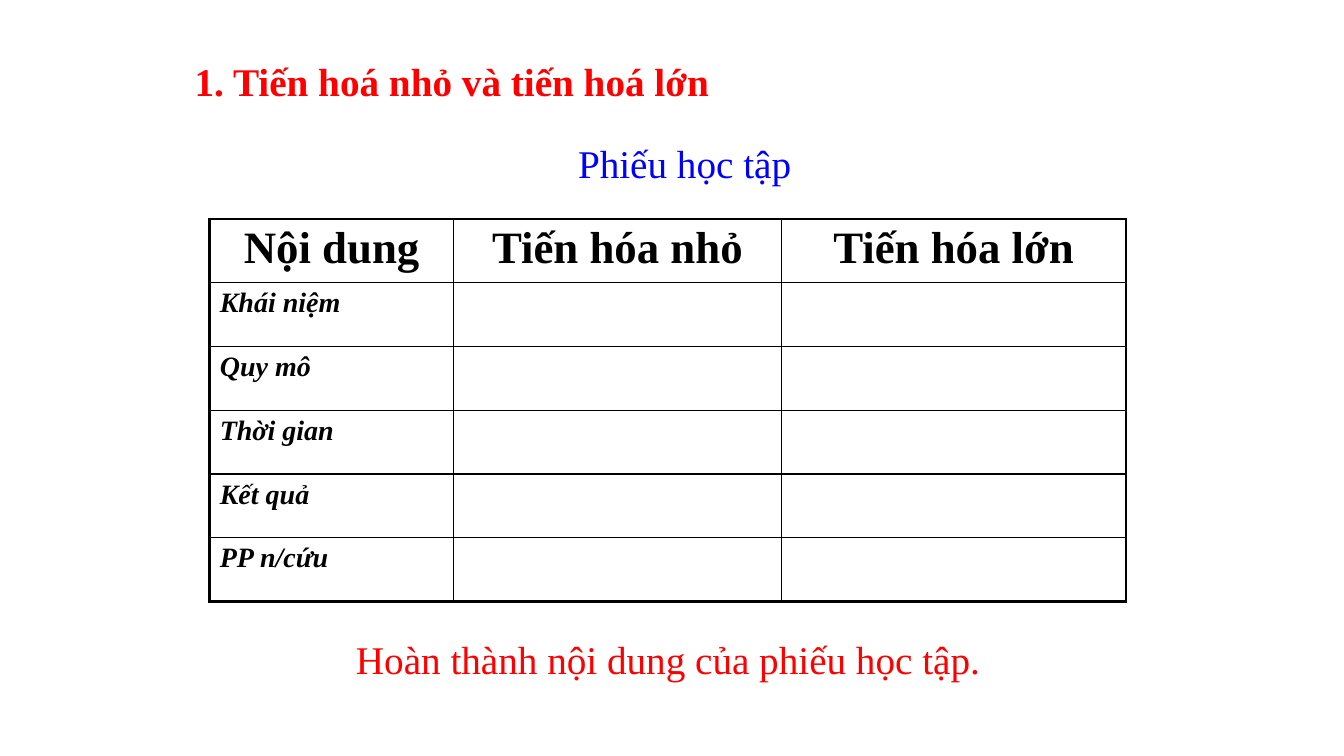
from lxml import etree
from pptx import Presentation
from pptx import util as u
from pptx.dml import color
from pptx.enum import text
from pptx.oxml import ns

RED, BLUE, BLACK = "FF0000", "0000FF", "000000"


def rgb(hex_code):
    return color.RGBColor.from_string(hex_code)


class Worksheet:
    """Holds the style and the slide being built."""

    font_name = "Times New Roman"
    caption_size = 28
    hanging = 0.38

    def __init__(self, prs):
        # Layout 5 has a title only
        self.slide = prs.slides.add_slide(prs.slide_layouts[5])

    def set_words(self, frame, words, size, hex_code, align, bold=False, italic=False):
        frame.text = words
        paragraph = frame.paragraphs[0]
        paragraph.alignment = align
        for run in paragraph.runs:
            font = run.font
            font.name, font.size = self.font_name, u.Pt(size)
            font.bold, font.italic = bold, italic
            font.color.rgb = rgb(hex_code)
        return paragraph

    def fill_line(self, shape, words, hex_code, align, bold=False):
        frame = shape.text_frame
        frame.word_wrap = True
        frame.auto_size = text.MSO_AUTO_SIZE.NONE
        frame.vertical_anchor = text.MSO_ANCHOR.TOP
        self.set_words(frame, words, self.caption_size, hex_code, align, bold)

    def heading(self, words, left, top, width, height):
        title = self.slide.shapes.title
        title.left, title.top = u.Inches(left), u.Inches(top)
        title.width, title.height = u.Inches(width), u.Inches(height)
        self.fill_line(title, words, RED, text.PP_ALIGN.LEFT, bold=True)

    def caption(self, words, hex_code, left, top, width, height):
        box = self.slide.shapes.add_textbox(*map(u.Inches, (left, top, width, height)))
        self.fill_line(box, words, hex_code, text.PP_ALIGN.CENTER)

    def border(self, cell, widths):
        properties = cell._tc.get_or_add_tcPr()
        for position, (side, width) in enumerate(widths.items()):
            line = etree.Element(ns.qn(f"a:ln{side}"), w=str(u.Pt(width)))
            fill = etree.SubElement(line, ns.qn("a:solidFill"))
            etree.SubElement(fill, ns.qn("a:srgbClr"), val=BLACK)
            properties.insert(position, line)

    def table(self, headers, topics, left, top, column_widths, row_height):
        row_count, column_count = len(topics) + 1, len(headers)
        grid = self.slide.shapes.add_table(
            row_count, column_count, u.Inches(left), u.Inches(top),
            u.Inches(sum(column_widths)), u.Inches(row_height * row_count)).table
        grid.first_row = grid.horz_banding = False
        for column, width in zip(grid.columns, column_widths):
            column.width = u.Inches(width)
        for row in grid.rows:
            row.height = u.Inches(row_height)

        # Header row, then one topic per row with blank answer cells
        blanks = [""] * (column_count - 1)
        rows = [headers] + [[topic] + blanks for topic in topics]
        for r, labels in enumerate(rows):
            for c, label in enumerate(labels):
                cell = grid.cell(r, c)
                cell.fill.background()
                # Thick frame, thin inner rules
                self.border(cell, {
                    "L": 2 if c == 0 else 1,
                    "R": 2 if c == column_count - 1 else 1,
                    "T": 2 if r == 0 else 1,
                    "B": 2 if r == row_count - 1 else 1})
                if label:
                    self.label(cell, label, is_header=r == 0)

    def label(self, cell, words, is_header):
        align = text.PP_ALIGN.CENTER if is_header else text.PP_ALIGN.LEFT
        paragraph = self.set_words(cell.text_frame, words, 32 if is_header else 20,
                                   BLACK, align, bold=True, italic=not is_header)
        indent = u.Inches(self.hanging)
        properties = paragraph._p.get_or_add_pPr()
        properties.set("marL", str(indent))
        properties.set("indent", str(-indent))


def main():
    prs = Presentation()
    prs.slide_width, prs.slide_height = u.Inches(13.33), u.Inches(7.5)
    sheet = Worksheet(prs)

    # Section heading and worksheet name
    sheet.heading("1. Tiến hoá nhỏ và tiến hoá lớn", 1.83, 0.52, 9.83, 0.57)
    sheet.caption("Phiếu học tập", BLUE, 5.25, 1.33, 3.08, 0.57)

    # Comparison table
    sheet.table(["Nội dung", "Tiến hóa nhỏ", "Tiến hóa lớn"],
                ["Khái niệm", "Quy mô", "Thời gian", "Kết quả", "PP n/cứu"],
                2.08, 2.17, [2.42, 3.25, 3.42], 3.8 / 6)

    # Task
    sheet.caption("Hoàn thành nội dung của phiếu học tập.", RED, 3.25, 6.25, 6.75, 0.57)

    prs.save("out.pptx")


if __name__ == "__main__":
    main()
